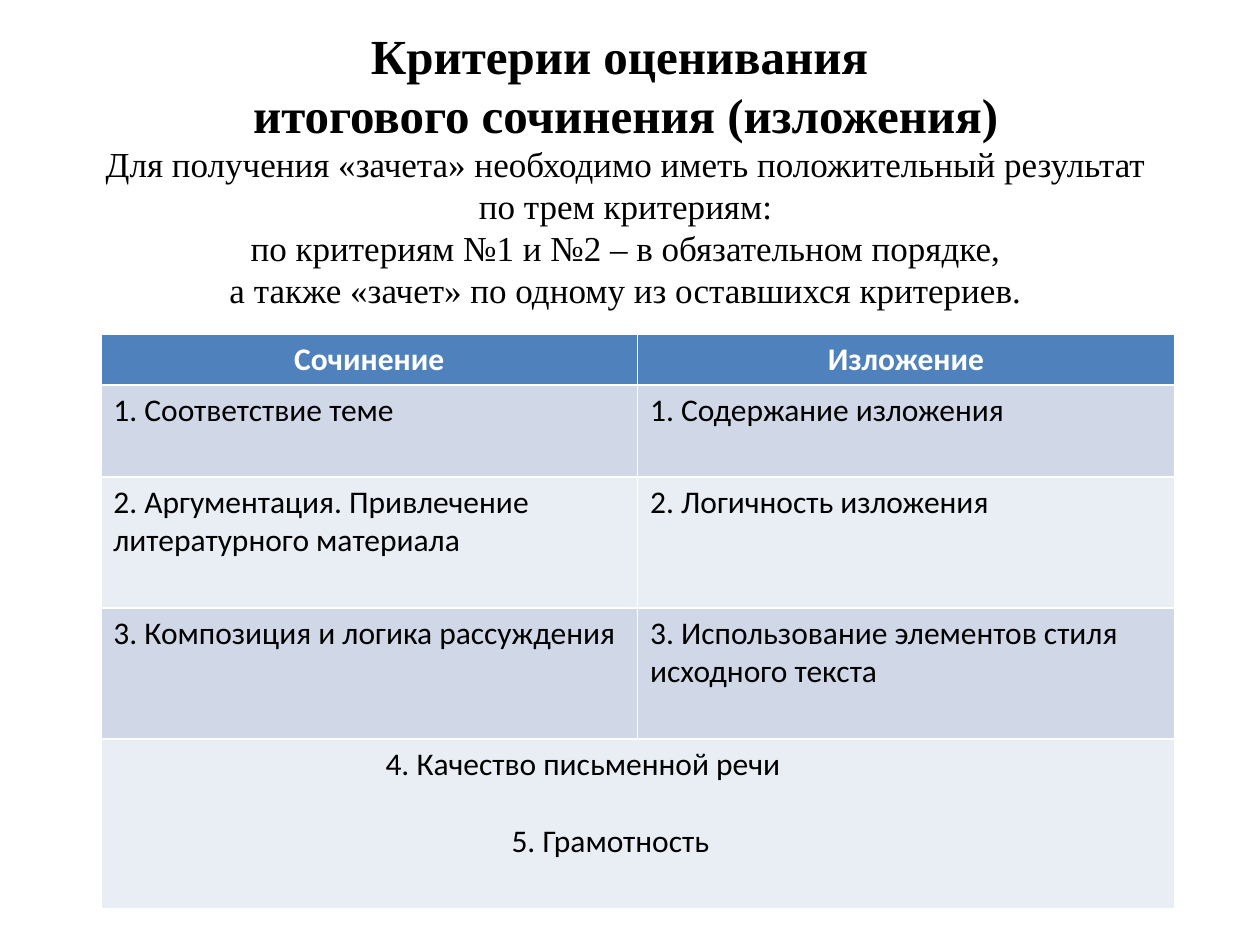
"""Build the slide on grading criteria for the final essay or exposition."""
import pptx
import pptx.util
import pptx.dml.color
import pptx.enum.text

Pt = pptx.util.Pt
ALIGN = pptx.enum.text.PP_ALIGN

HEAD = [
    ("Критерии оценивания \vитогового сочинения (изложения)", 28, True),
    ("Для получения «зачета» необходимо иметь положительный результат "
     "по трем критериям:\vпо критериям №1 и №2 – в обязательном порядке,\v"
     "а также «зачет» по одному из оставшихся критериев.", 20, False),
]
ROWS = [
    ("Сочинение", "Изложение"),
    ("1. Соответствие теме", "1. Содержание изложения"),
    ("2. Аргументация. Привлечение литературного материала",
     "2. Логичность изложения"),
    ("3. Композиция и логика рассуждения",
     "3. Использование элементов стиля исходного текста"),
]
SHARED = [("4. Качество письменной речи", 155.5, 0),
          ("5. Грамотность", 227.5, 22)]
HEIGHTS = [28.2, 52.5, 74.9, 74.9, 97.1]
FILLS = ["4F81BD", "D0D8E8", "E9EDF4", "D0D8E8", "E9EDF4"]
WIDTH = 306.75


def tint(hue):
    return pptx.dml.color.RGBColor.from_string(hue)


def style(para, face, size, hue, bold, align):
    para.alignment = align
    for run in para.runs:
        font = run.font
        font.name, font.size, font.bold = face, Pt(size), bold
        font.color.rgb = tint(hue)


def add_title(slide):
    title = slide.shapes.title
    title.left, title.top = Pt(43.9), Pt(10.8)
    title.width, title.height = Pt(627.1), Pt(170)
    frame = title.text_frame
    frame.word_wrap = True
    frame.auto_size = pptx.enum.text.MSO_AUTO_SIZE.NONE
    frame.vertical_anchor = pptx.enum.text.MSO_ANCHOR.TOP
    for i, (text, size, bold) in enumerate(HEAD):
        para = frame.add_paragraph() if i else frame.paragraphs[0]
        para.text = text
        para.space_before = Pt(0)
        style(para, "Times New Roman", size, "000000", bold, ALIGN.CENTER)


def add_grid(slide):
    grid = slide.shapes.add_table(
        len(HEIGHTS), 2, Pt(57.6), Pt(190.8),
        Pt(2 * WIDTH), Pt(sum(HEIGHTS))).table
    for col in grid.columns:
        col.width = Pt(WIDTH)
    for row, height, hue in zip(grid.rows, HEIGHTS, FILLS):
        row.height = Pt(height)
        for cell in row.cells:
            cell.fill.solid()
            cell.fill.fore_color.rgb = tint(hue)
    for r, texts in enumerate(ROWS):
        top = r == 0
        for c, text in enumerate(texts):
            para = grid.cell(r, c).text_frame.paragraphs[0]
            para.text = text
            style(para, "Calibri", 18, "FFFFFF" if top else "000000", top,
                  ALIGN.CENTER if top else ALIGN.LEFT)
    last = len(ROWS)
    grid.cell(last, 0).merge(grid.cell(last, 1))
    frame = grid.cell(last, 0).text_frame
    for i, (text, indent, gap) in enumerate(SHARED):
        para = frame.add_paragraph() if i else frame.paragraphs[0]
        para.text = text
        para.space_before = Pt(gap)
        para._p.get_or_add_pPr().set("marL", str(Pt(indent)))
        style(para, "Calibri", 18, "000000", False, ALIGN.LEFT)


def main():
    deck = pptx.Presentation()
    deck.slide_width, deck.slide_height = Pt(720), Pt(540)
    slide = deck.slides.add_slide(deck.slide_layouts[5])
    add_title(slide)
    add_grid(slide)
    deck.save("out.pptx")


if __name__ == "__main__":
    main()
